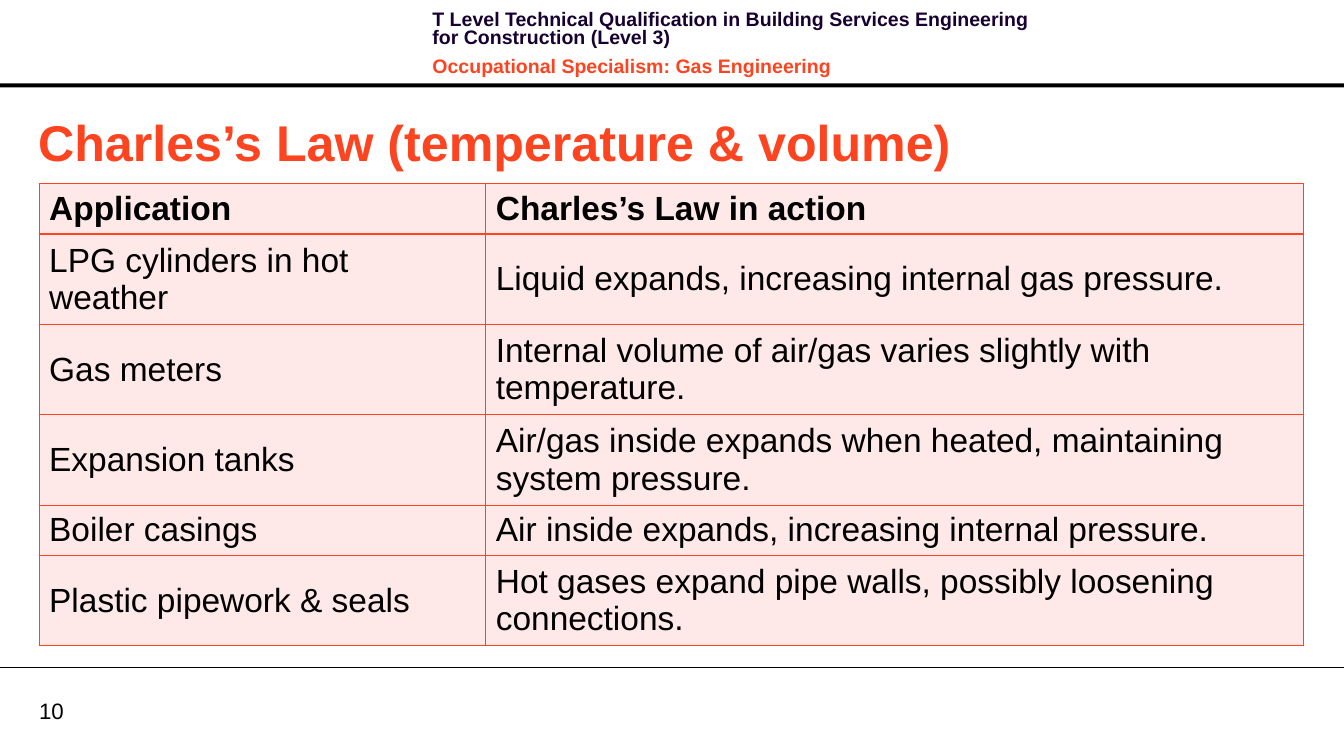
from lxml.etree import SubElement
from pptx import Presentation
from pptx.dml.color import RGBColor
from pptx.enum.shapes import MSO_CONNECTOR, MSO_SHAPE
from pptx.enum.text import MSO_ANCHOR, PP_ALIGN
from pptx.oxml.ns import qn
from pptx.util import Inches, Pt

ORANGE = RGBColor(0xFC, 0x44, 0x21)
NAVY = RGBColor(0x17, 0x01, 0x30)
BLACK = RGBColor(0x00, 0x00, 0x00)
PINK = RGBColor(0xFE, 0xE9, 0xE8)

SLIDE_WIDTH, SLIDE_HEIGHT = 13.39, 7.48
COLUMN_WIDTHS = (4.45, 8.15)
SINGLE_ROW, DOUBLE_ROW = 0.47, 0.85
ROW_HEIGHTS = (SINGLE_ROW, DOUBLE_ROW, DOUBLE_ROW, DOUBLE_ROW, SINGLE_ROW, DOUBLE_ROW)
APPLICATIONS = (
    ("Application", "Charles’s Law in action"),
    ("LPG cylinders in hot weather", "Liquid expands, increasing internal gas pressure."),
    ("Gas meters", "Internal volume of air/gas varies slightly with temperature."),
    ("Expansion tanks", "Air/gas inside expands when heated, maintaining system pressure."),
    ("Boiler casings", "Air inside expands, increasing internal pressure."),
    ("Plastic pipework & seals", "Hot gases expand pipe walls, possibly loosening connections."),
)


class SlideBuilder:
    """Holds the font style and the current slide, and adds each kind of element."""

    def __init__(self, slide, font_name="Arial"):
        self.slide = slide
        self.font_name = font_name

    def set_values(self, target, values):
        for name, value in values.items():
            setattr(target, name, value)

    def fill_paragraph(self, paragraph, text, size, color, bold=False, **layout):
        paragraph.text = text
        self.set_values(paragraph, layout)
        self.set_values(paragraph.font, {"name": self.font_name, "size": Pt(size), "bold": bold})
        paragraph.font.color.rgb = color

    def frame(self, text_frame, anchor, horizontal=0.1, vertical=0.05):
        self.set_values(text_frame, {
            "word_wrap": True,
            "vertical_anchor": anchor,
            "margin_left": Inches(horizontal),
            "margin_right": Inches(horizontal),
            "margin_top": Inches(vertical),
            "margin_bottom": Inches(vertical),
        })
        return text_frame

    def title(self, text, left, top, width, height):
        shape = self.slide.shapes.title
        self.set_values(shape, {
            "left": Inches(left), "top": Inches(top),
            "width": Inches(width), "height": Inches(height),
        })
        text_frame = self.frame(shape.text_frame, MSO_ANCHOR.MIDDLE)
        self.fill_paragraph(
            text_frame.paragraphs[0], text, 36, ORANGE, True, alignment=PP_ALIGN.LEFT)

    def text_box(self, left, top, width, height, anchor, **margins):
        shape = self.slide.shapes.add_textbox(
            Inches(left), Inches(top), Inches(width), Inches(height))
        return self.frame(shape.text_frame, anchor, **margins)

    def bar(self, left, top, width, height, color):
        shape = self.slide.shapes.add_shape(
            MSO_SHAPE.RECTANGLE, Inches(left), Inches(top), Inches(width), Inches(height))
        shape.shadow.inherit = False
        shape.fill.solid()
        shape.fill.fore_color.rgb = color
        shape.line.fill.background()

    def rule(self, top, color, weight):
        connector = self.slide.shapes.add_connector(
            MSO_CONNECTOR.STRAIGHT, Inches(0), Inches(top), Inches(SLIDE_WIDTH), Inches(top))
        connector.line.color.rgb = color
        connector.line.width = Pt(weight)
        SubElement(connector._element.spPr, qn("a:effectLst"))

    def cell_borders(self, cell, color, weight):
        properties = cell._tc.get_or_add_tcPr()
        for position, side in enumerate(("a:lnL", "a:lnR", "a:lnT", "a:lnB")):
            border = properties.makeelement(qn(side), {"w": str(Pt(weight))})
            properties.insert(position, border)
            fill = SubElement(border, qn("a:solidFill"))
            SubElement(fill, qn("a:srgbClr"), val=str(color))

    def table(self, rows, left, top, column_widths, row_heights):
        table = self.slide.shapes.add_table(
            len(rows), len(column_widths), Inches(left), Inches(top),
            Inches(sum(column_widths)), Inches(sum(row_heights))).table
        for column, width in zip(table.columns, column_widths):
            column.width = Inches(width)
        for row, height, texts in zip(table.rows, row_heights, rows):
            row.height = Inches(height)
            for cell, text in zip(row.cells, texts):
                cell.vertical_anchor = MSO_ANCHOR.MIDDLE
                cell.fill.solid()
                cell.fill.fore_color.rgb = PINK
                self.cell_borders(cell, ORANGE, 1)
                self.fill_paragraph(
                    cell.text_frame.paragraphs[0], text, 24, BLACK, texts is rows[0])


def main():
    presentation = Presentation()
    presentation.slide_width = Inches(SLIDE_WIDTH)
    presentation.slide_height = Inches(SLIDE_HEIGHT)
    builder = SlideBuilder(presentation.slides.add_slide(presentation.slide_layouts[5]))

    builder.bar(0, 0.83, SLIDE_WIDTH, 0.04, BLACK)
    builder.rule(6.65, BLACK, 0.75)

    page_number = builder.text_box(
        0.39, 6.94, 0.64, 0.27, MSO_ANCHOR.MIDDLE, horizontal=0, vertical=0)
    builder.fill_paragraph(page_number.paragraphs[0], "10", 16, BLACK)

    header = builder.text_box(4.21, 0.07, 6.37, 0.64, MSO_ANCHOR.TOP)
    spacing = {"line_spacing": Pt(13.1), "space_after": Pt(4)}
    builder.fill_paragraph(
        header.paragraphs[0],
        "T Level Technical Qualification in Building Services Engineering for Construction (Level 3)",
        14, NAVY, True, **spacing)
    builder.fill_paragraph(
        header.add_paragraph(), "Occupational Specialism: Gas Engineering",
        14, ORANGE, True, space_before=Pt(4), **spacing)

    builder.title("Charles’s Law (temperature & volume)", 0.28, 1.05, 12.72, 0.71)
    builder.table(APPLICATIONS, 0.39, 1.83, COLUMN_WIDTHS, ROW_HEIGHTS)

    presentation.save("out.pptx")


if __name__ == "__main__":
    main()
